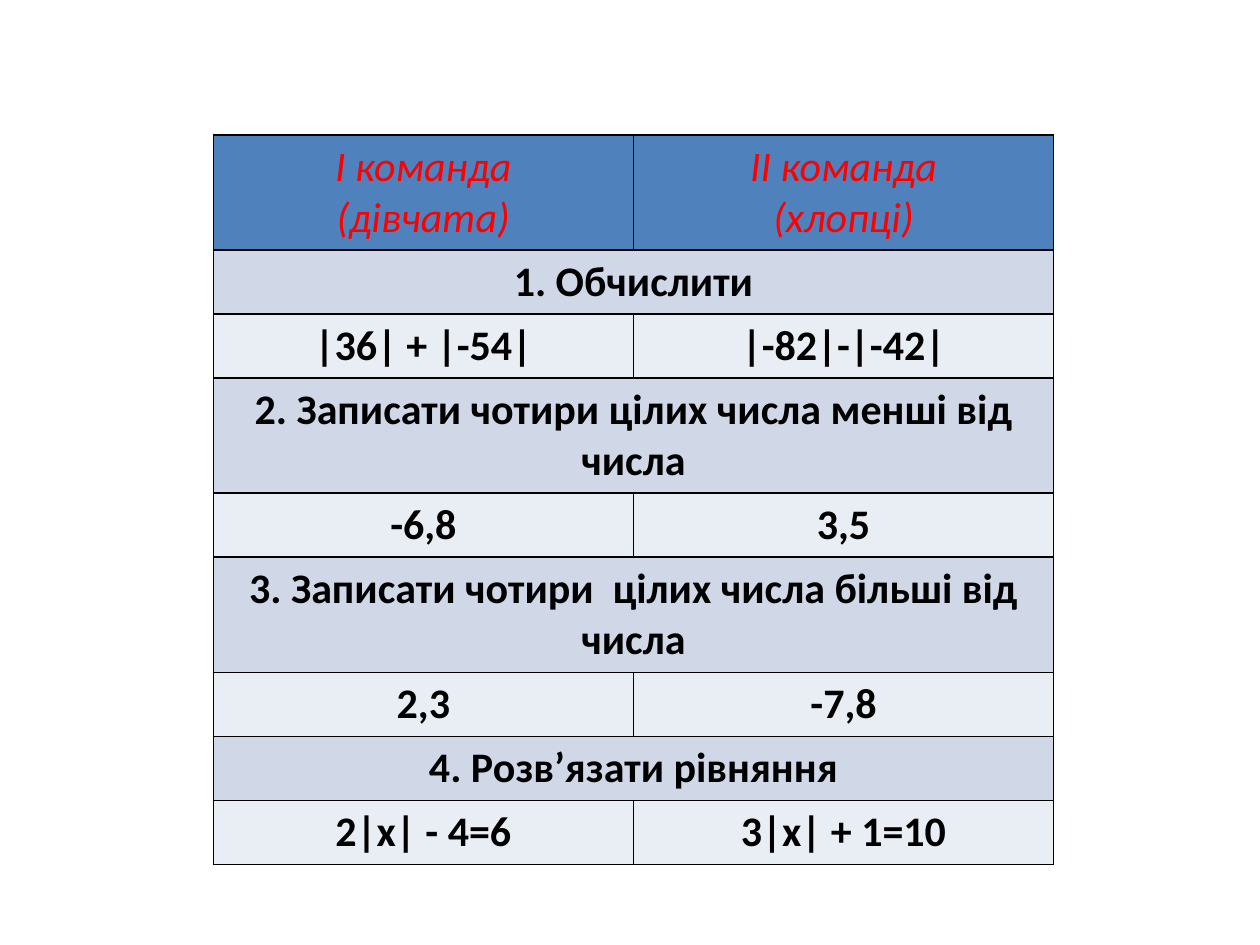
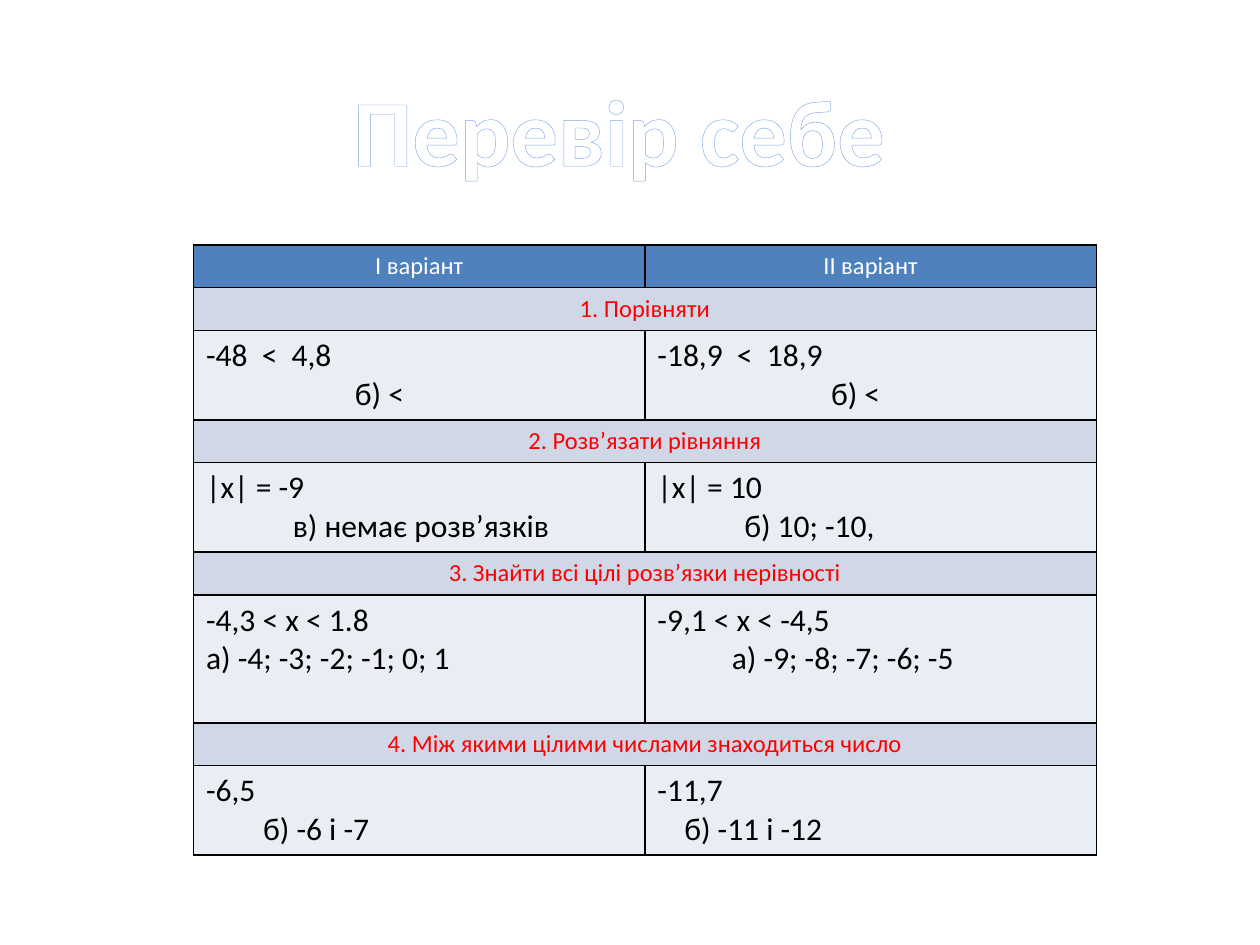
from dataclasses import dataclass

from lxml import etree
from pptx import Presentation, util as u
from pptx.dml.color import RGBColor
from pptx.enum import text
from pptx.oxml import ns

TITLE_ONLY, BLANK = 5, 6
CENTER, LEFT = text.PP_ALIGN.CENTER, text.PP_ALIGN.LEFT


@dataclass(frozen=True)
class Theme:
    font: str = "Calibri"
    header: str = "4F81BD"
    task: str = "D0D8E8"
    answer: str = "E9EDF4"
    black: str = "000000"
    white: str = "FFFFFF"
    red: str = "FF0000"
    outline: str = "7EA6EA"
    title_pt: int = 54
    large_pt: int = 24
    body_pt: int = 18
    small_pt: int = 14
    border_pt: float = 1
    outline_pt: float = 2.48


def add_line(parent, tag, color, width, index=None):
    """Add a solid a:ln-type element to parent."""
    ln = etree.Element(ns.qn(tag), w=str(int(u.Pt(width))))
    fill = etree.SubElement(ln, ns.qn("a:solidFill"))
    etree.SubElement(fill, ns.qn("a:srgbClr"), val=color)
    parent.insert(len(parent) if index is None else index, ln)


class Deck:
    def __init__(self, theme):
        self.theme = theme
        self.prs = Presentation()
        self.prs.slide_width, self.prs.slide_height = u.Cm(25.4), u.Cm(19.05)
        self.s = None

    def slide(self, layout):
        self.s = self.prs.slides.add_slide(self.prs.slide_layouts[layout])

    def add_words(self, p, words, size, color, align=CENTER, **font):
        p.alignment = align
        r = p.add_run()
        r.text = words
        formats = {"name": self.theme.font, "size": u.Pt(size), "bold": False, "italic": False}
        for key, value in (formats | font).items():
            setattr(r.font, key, value)
        r.font.color.rgb = RGBColor.from_string(color)
        return r

    def title(self, words, left, top, width, height):
        t, sp = self.theme, self.s.shapes.title
        for key, value in dict(left=left, top=top, width=width, height=height).items():
            setattr(sp, key, u.Cm(value))
        tf = sp.text_frame
        tf.word_wrap = False
        tf.vertical_anchor = text.MSO_ANCHOR.TOP
        r = self.add_words(tf.paragraphs[0], words, t.title_pt, t.white, bold=True)
        add_line(r.font._element, "a:ln", t.outline, t.outline_pt, 0)

    def cell(self, cell, lines, fill, style):
        """Fill one cell; a line is words or (words, first-line indent in cm)."""
        tc_pr = cell._tc.get_or_add_tcPr()
        for side in "LRTB":
            add_line(tc_pr, f"a:ln{side}", self.theme.black, self.theme.border_pt)
        cell.fill.solid()
        cell.fill.fore_color.rgb = RGBColor.from_string(fill)
        tf = cell.text_frame
        for i, line in enumerate(lines):
            words, indent = (line, 0) if isinstance(line, str) else line
            p = tf.paragraphs[0] if i == 0 else tf.add_paragraph()
            self.add_words(p, words, **style)
            if indent:
                p._p.get_or_add_pPr().set("indent", str(int(u.Cm(indent))))

    def table(self, left, top, width, rows, heights, styles):
        """Header row, then tasks across both columns, each above two answers."""
        t = self.theme
        frame = self.s.shapes.add_table(len(rows), 2, u.Cm(left), u.Cm(top),
                                        u.Cm(width), u.Cm(sum(heights)))
        tbl = frame.table
        tbl.first_row = tbl.horz_banding = False
        for col in tbl.columns:
            col.width = u.Cm(width / 2)
        for i, (row, height) in enumerate(zip(rows, heights)):
            tbl.rows[i].height = u.Cm(height)
            kind = "header" if i == 0 else "task" if len(row) == 1 else "answer"
            if kind == "task":
                tbl.cell(i, 0).merge(tbl.cell(i, 1))
            for j in range(2):
                lines = row[j] if j < len(row) else []
                self.cell(tbl.cell(i, j), lines, getattr(t, kind), styles[kind])
        return tbl


def team_tasks(deck):
    t = deck.theme
    one, two = 1.29, 2.32
    rows = [
        [["І команда", "(дівчата)"], ["ІІ команда", "(хлопці)"]],
        [["1. Обчислити"]],
        [["|36| + |-54|"], ["|-82|-|-42|"]],
        [["2. Записати чотири цілих числа менші від числа"]],
        [["-6,8"], ["3,5"]],
        [["3. Записати чотири  цілих числа більші від числа"]],
        [["2,3"], ["-7,8"]],
        [["4. Розв’язати рівняння"]],
        [["2|х| - 4=6"], ["3|х| + 1=10"]],
    ]
    bold = dict(size=t.large_pt, color=t.black, bold=True)
    styles = dict(header=dict(size=t.large_pt, color=t.red, italic=True),
                  task=bold, answer=bold)
    deck.slide(BLANK)
    tbl = deck.table(4.3, 2.72, 16.94, rows,
                     [two, one, one, two, one, two, one, one, one], styles)
    for j in range(2):
        tbl.cell(0, j).vertical_anchor = text.MSO_ANCHOR.MIDDLE


def check_yourself(deck):
    t = deck.theme
    one, two, three = 0.86, 1.8, 2.58
    rows = [
        [["І варіант"], ["ІІ варіант"]],
        [["1. Порівняти"]],
        [["-48  <  4,8", ("б) <", 3)], ["-18,9  <  18,9", ("б) <", 3.5)]],
        [["2. Розв’язати рівняння"]],
        [["|х| = -9", ("в) немає розв’язків", 1.75)], ["|х| = 10", ("б) 10; -10,", 1.75)]],
        [["3. Знайти всі цілі розв’язки нерівності"]],
        [["-4,3 < x < 1.8", "а) -4; -3; -2; -1; 0; 1"],
         ["-9,1 < x < -4,5", ("а) -9; -8; -7; -6; -5", 1.5)]],
        [["4. Між якими цілими числами знаходиться число"]],
        [["-6,5", ("б) -6 і -7", 1.15)], ["-11,7", ("б) -11 і -12", 0.54)]],
    ]
    styles = dict(header=dict(size=t.small_pt, color=t.white),
                  task=dict(size=t.small_pt, color=t.red),
                  answer=dict(size=t.body_pt, color=t.black, align=LEFT))
    deck.slide(TITLE_ONLY)
    deck.table(3.9, 4.94, 18.2, rows,
               [one, one, two, one, two, one, three, one, two], styles)
    deck.title("Перевір себе", 6.58, 1.32, 11.8, 2.56)


def main():
    deck = Deck(Theme())
    team_tasks(deck)
    check_yourself(deck)
    deck.prs.save("out.pptx")


if __name__ == "__main__":
    main()
